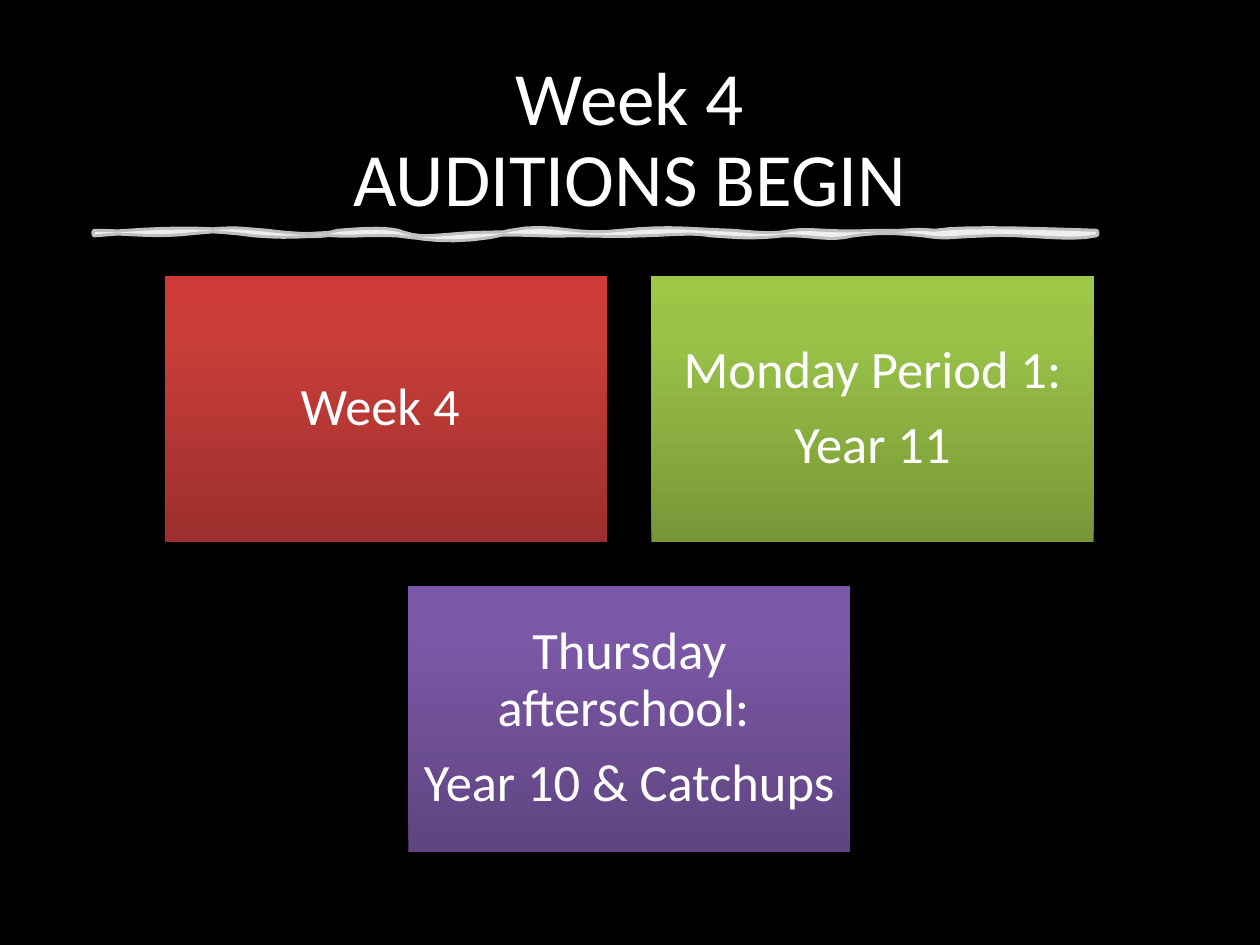
"""Build the Week 4 auditions slide: a title, a brushed underline and three cards."""
from copy import deepcopy
from dataclasses import dataclass

from pptx import Presentation, util as u
from pptx.dml.color import RGBColor
from pptx.enum import shapes, text
from pptx.oxml import parse_xml
from pptx.oxml.ns import nsdecls, qn

BLACK = RGBColor(0, 0, 0)
WHITE = RGBColor(255, 255, 255)
RED = (RGBColor(0x9C, 0x2F, 0x2D), RGBColor(0xCB, 0x3E, 0x3A), RGBColor(0xCE, 0x3B, 0x37))
GREEN = (RGBColor(0x77, 0x97, 0x37), RGBColor(0x9B, 0xC3, 0x48), RGBColor(0x9D, 0xC7, 0x46))
PURPLE = (RGBColor(0x5F, 0x44, 0x80), RGBColor(0x7B, 0x58, 0xA6), RGBColor(0x7C, 0x57, 0xA8))
STOP_POSITIONS = (0, 0.8, 1)

GRID_LEFT, GRID_TOP = 1.31, 2.19
CARD_WIDTH, CARD_HEIGHT, GAP = 3.51, 2.11, 0.35

BRUSH_START = (0.75, 1.84)
BRUSH_CURVES = (
    (1.01, 1.84, 1.24, 1.88, 1.55, 1.84), (1.89, 1.81, 1.86, 1.82, 2.12, 1.84),
    (2.35, 1.87, 2.57, 1.88, 2.68, 1.84), (2.83, 1.83, 3.02, 1.81, 3.16, 1.84),
    (3.23, 1.88, 3.63, 1.95, 4.05, 1.84), (4.4, 1.77, 4.55, 1.89, 4.93, 1.84),
    (5.34, 1.8, 5.46, 1.83, 5.81, 1.84), (6.15, 1.87, 6.16, 1.86, 6.29, 1.84),
    (6.45, 1.82, 6.61, 1.86, 6.94, 1.84), (7.25, 1.85, 7.21, 1.82, 7.42, 1.84),
    (7.66, 1.8, 8.36, 1.83, 8.7, 1.84), (8.7, 1.85, 8.7, 1.85, 8.7, 1.86),
    (8.48, 1.91, 8.14, 1.84, 7.82, 1.86), (7.5, 1.87, 7.53, 1.89, 7.33, 1.86),
    (7.11, 1.84, 7.01, 1.83, 6.77, 1.86), (6.58, 1.91, 6.43, 1.85, 6.21, 1.86),
    (5.96, 1.89, 5.82, 1.87, 5.64, 1.86), (5.5, 1.83, 5.24, 1.86, 5.08, 1.86),
    (4.9, 1.87, 4.74, 1.86, 4.52, 1.86), (4.3, 1.87, 4.14, 1.84, 3.71, 1.86),
    (3.32, 1.89, 3.4, 1.89, 3.15, 1.86), (2.89, 1.85, 2.8, 1.87, 2.67, 1.86),
    (2.52, 1.85, 2.35, 1.89, 2.02, 1.86), (1.66, 1.81, 1.33, 1.81, 0.75, 1.86),
)


@dataclass(frozen=True)
class Card:
    """A coloured card on the grid; column may be fractional."""
    column: float
    row: int
    lines: tuple[str, ...]
    colours: tuple[RGBColor, ...]


CARDS = (
    Card(0, 0, ("Week 4 ",), RED),
    Card(1, 0, ("Monday Period 1:", "Year 11"), GREEN),
    Card(0.5, 1, ("Thursday afterschool: ", "Year 10 & Catchups"), PURPLE),
)


def apply(target, values: dict) -> None:
    """Set every named attribute on the target."""
    for name, value in values.items():
        setattr(target, name, value)


def write(shape, content: str, size: float, inset: float, space_after: float) -> None:
    """Write centred white text into a shape."""
    frame = shape.text_frame
    frame.text = content
    margins = dict.fromkeys(
        ("margin_left", "margin_top", "margin_right", "margin_bottom"), u.Inches(inset))
    apply(frame, {"word_wrap": True, "auto_size": text.MSO_AUTO_SIZE.NONE,
                  "vertical_anchor": text.MSO_ANCHOR.MIDDLE, **margins})
    for paragraph in frame.paragraphs:
        apply(paragraph, {"alignment": text.PP_ALIGN.CENTER, "line_spacing": 0.9,
                          "space_before": u.Pt(0), "space_after": u.Pt(space_after)})
        for run in paragraph.runs:
            apply(run.font, {"name": "Calibri", "size": u.Pt(size)})
            run.font.color.rgb = WHITE


def fill_gradient(shape, colours: tuple[RGBColor, ...]) -> None:
    """Fill a shape with a three-stop gradient running upwards."""
    shape.fill.gradient()
    shape.fill.gradient_angle = 90
    stop_list = next(shape._element.spPr.iter(qn("a:gsLst")))
    stop_list.append(deepcopy(stop_list[-1]))
    for stop, position, colour in zip(shape.fill.gradient_stops, STOP_POSITIONS, colours):
        stop.position = position
        stop.color.rgb = colour


def draw_card(slide, card: Card) -> None:
    """Draw one card in its grid place."""
    left = GRID_LEFT + card.column * (CARD_WIDTH + GAP)
    top = GRID_TOP + card.row * (CARD_HEIGHT + GAP)
    shape = slide.shapes.add_shape(
        shapes.MSO_SHAPE.RECTANGLE,
        *map(u.Inches, (left, top, CARD_WIDTH, CARD_HEIGHT)))
    shape.shadow.inherit = False
    shape.line.fill.background()
    fill_gradient(shape, card.colours)
    write(shape, "\n".join(card.lines), size=30, inset=0.12, space_after=10.5)


def brush_points(steps: int = 8) -> list[tuple[int, int]]:
    """Sample the Bézier curves of the brush stroke."""
    points, start = [], BRUSH_START
    for curve in BRUSH_CURVES:
        for step in range(1, steps + 1):
            t = step / steps
            weights = ((1 - t) ** 3, 3 * t * (1 - t) ** 2, 3 * t * t * (1 - t), t ** 3)
            points.append(tuple(
                u.Inches(sum(w * p for w, p in zip(weights, (start[axis], *curve[axis::2]))))
                for axis in (0, 1)))
        start = curve[4:]
    return points


def draw_brush(slide) -> None:
    """Draw the translucent underline below the title."""
    builder = slide.shapes.build_freeform(*map(u.Inches, BRUSH_START))
    builder.add_line_segments(brush_points(), close=True)
    shape = builder.convert_to_shape()
    shape.shadow.inherit = False
    shape.line.width = u.Pt(3.5)
    for fill in (shape.fill, shape.line.fill):
        fill.solid()
        fill.fore_color.rgb = WHITE
    for colour in shape._element.spPr.iter(qn("a:srgbClr")):
        colour.append(parse_xml(f'<a:alpha {nsdecls("a")} val="75000"/>'))


def main() -> None:
    """Assemble and save the presentation."""
    presentation = Presentation()
    apply(presentation, {"slide_width": u.Inches(10), "slide_height": u.Inches(7.5)})
    slide = presentation.slides.add_slide(presentation.slide_layouts[5])
    slide.background.fill.solid()
    slide.background.fill.fore_color.rgb = BLACK
    title = slide.shapes.title
    apply(title, {"left": u.Inches(0.69), "top": u.Inches(0.4),
                  "width": u.Inches(8.62), "height": u.Inches(1.45)})
    write(title, "Week 4\vAUDITIONS BEGIN", size=43, inset=0.05, space_after=0)
    draw_brush(slide)
    for card in CARDS:
        draw_card(slide, card)
    presentation.save("out.pptx")


if __name__ == "__main__":
    main()
